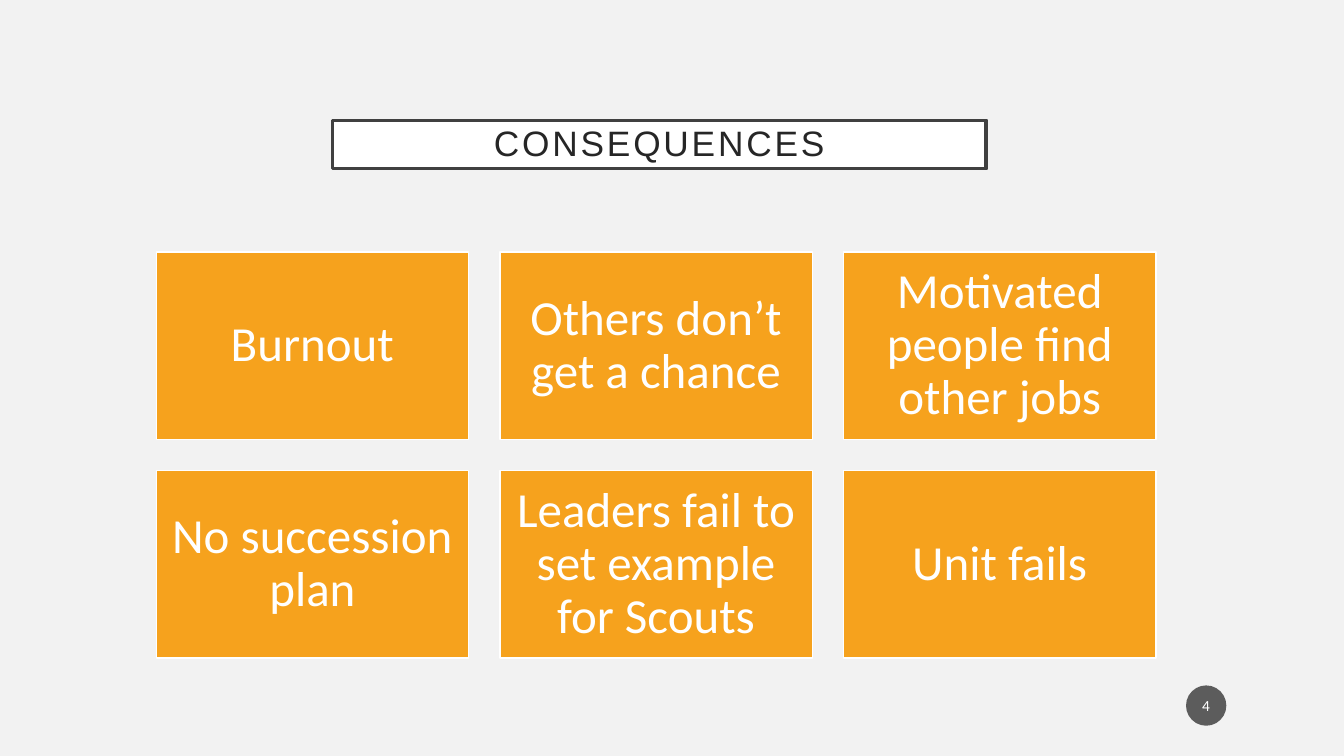
from dataclasses import dataclass

from lxml.etree import SubElement
from pptx import Presentation
from pptx.dml.color import RGBColor
from pptx.enum.shapes import MSO_SHAPE
from pptx.enum.text import MSO_ANCHOR, PP_ALIGN
from pptx.oxml.ns import qn
from pptx.util import Pt


@dataclass(frozen=True)
class Theme:
    background: str = "F2F2F2"
    white: str = "FFFFFF"
    border: str = "404040"
    title_text: str = "262626"
    card: str = "F6A21D"
    badge: str = "1D1D1D"
    title_font: str = "Arial"
    body_font: str = "Calibri"
    title_size: float = 25.2
    card_size: float = 35
    badge_size: float = 11


def write(sp, text, *, font, size, color, insets, line_spacing=1.0, tracking=0):
    """Centre text in a shape; insets are (horizontal, vertical), tracking is in points."""
    tf = sp.text_frame
    tf.word_wrap = True
    tf.vertical_anchor = MSO_ANCHOR.MIDDLE
    tf.margin_left = tf.margin_right = Pt(insets[0])
    tf.margin_top = tf.margin_bottom = Pt(insets[1])
    p = tf.paragraphs[0]
    p.alignment = PP_ALIGN.CENTER
    p.line_spacing = line_spacing
    r = p.add_run()
    r.text = text
    r.font.name = font
    r.font.size = Pt(size)
    r.font.color.rgb = RGBColor.from_string(color)
    if tracking:
        r._r.get_or_add_rPr().set("spc", str(tracking * 100))


class SlideBuilder:
    def __init__(self, slide, theme):
        self.slide, self.theme = slide, theme
        fill = slide.background.fill
        fill.solid()
        fill.fore_color.rgb = RGBColor.from_string(theme.background)

    def shape(self, kind, box, fill, line=None, line_width=1):
        sp = self.slide.shapes.add_shape(kind, *map(Pt, box))
        sp.shadow.inherit = False
        sp.fill.solid()
        sp.fill.fore_color.rgb = RGBColor.from_string(fill)
        if line:
            sp.line.color.rgb = RGBColor.from_string(line)
            sp.line.width = Pt(line_width)
        else:
            sp.line.fill.background()
        return sp

    def title(self, text, box):
        t = self.theme
        sp = self.shape(MSO_SHAPE.RECTANGLE, box, t.white, t.border, 2.5)
        write(sp, text, font=t.title_font, size=t.title_size, color=t.title_text,
              insets=(14.4, 14.4), line_spacing=0.9, tracking=2)

    def card(self, text, box):
        t = self.theme
        sp = self.shape(MSO_SHAPE.RECTANGLE, box, t.card, t.white)
        write(sp, text, font=t.body_font, size=t.card_size, color=t.white,
              insets=(10.5, 10.5), line_spacing=0.9)

    def card_grid(self, texts, left, top, width, height, gap, columns):
        for i, text in enumerate(texts):
            row, col = divmod(i, columns)
            self.card(text, (left + col * (width + gap), top + row * (height + gap), width, height))

    def page_badge(self, number, box, opacity):
        t = self.theme
        sp = self.shape(MSO_SHAPE.OVAL, box, t.badge)
        color = sp.fill._xPr.find(qn("a:solidFill"))[0]
        SubElement(color, qn("a:alpha"), val=str(opacity * 1000))
        write(sp, number, font=t.body_font, size=t.badge_size, color=t.white, insets=(1.4, 3.6))


CONSEQUENCES = [
    "Burnout",
    "Others don’t get a chance",
    "Motivated people find other jobs",
    "No succession plan",
    "Leaders fail to set example for Scouts",
    "Unit fails",
]


def main():
    prs = Presentation()
    prs.slide_width, prs.slide_height = Pt(960), Pt(540)
    s = SlideBuilder(prs.slides.add_slide(prs.slide_layouts[6]), Theme())
    s.title("CONSEQUENCES", (237.5, 86, 467, 34.5))
    s.card_grid(CONSEQUENCES, left=111.6, top=180, width=223.2, height=133.9, gap=22.3, columns=3)
    s.page_badge("4", (847.2, 489.6, 28.8, 28.8), opacity=70)
    prs.save("out.pptx")


if __name__ == "__main__":
    main()
